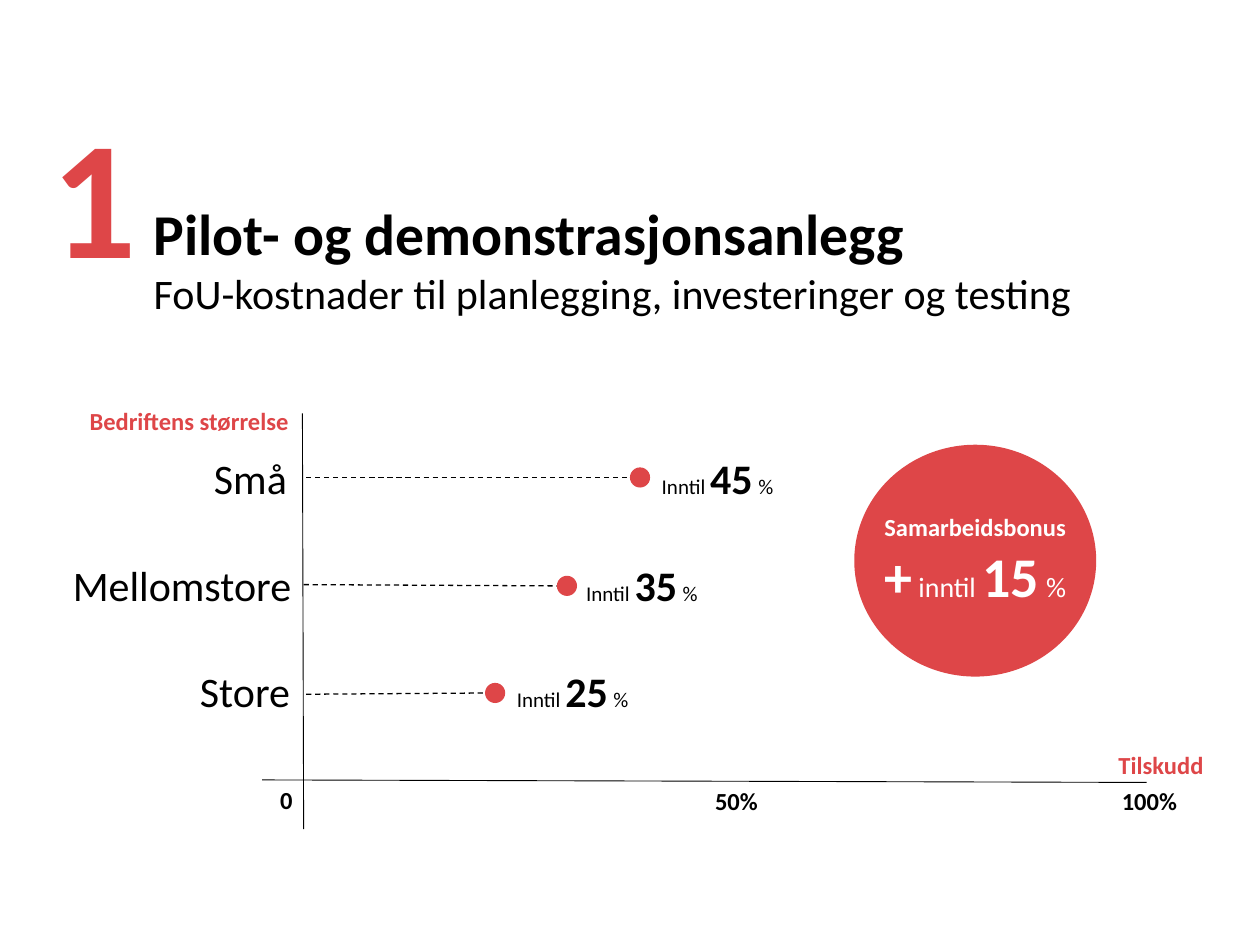
"""Build the slide on grant rates for pilot and demonstration plants."""
from lxml import etree
from pptx import Presentation
from pptx.dml.color import RGBColor
from pptx.enum import dml, shapes, text
from pptx.oxml.ns import qn
from pptx.util import Pt

PX = 9144
RED = RGBColor(0xDE, 0x46, 0x48)
BLACK = RGBColor(0, 0, 0)
WHITE = RGBColor(255, 255, 255)
LEFT, CENTER, RIGHT = text.PP_ALIGN.LEFT, text.PP_ALIGN.CENTER, text.PP_ALIGN.RIGHT


class Deck:
    """Hold the font and the current slide, and draw its elements."""

    def __init__(self, width, height, font):
        self.prs = Presentation()
        self.prs.slide_width, self.prs.slide_height = width * PX, height * PX
        self.slide = self.prs.slides.add_slide(self.prs.slide_layouts[5])
        self.font = font

    def run(self, p, words, size, color=BLACK, bold=False):
        r = p.add_run()
        r.text = words
        r.font.name, r.font.size, r.font.bold = self.font, Pt(size), bold
        r.font.color.rgb = color

    def title(self, box, heading, subheading):
        sp = self.slide.shapes.title
        sp.left, sp.top, sp.width, sp.height = (v * PX for v in box)
        tf = sp.text_frame
        tf.margin_left = tf.margin_top = tf.margin_right = tf.margin_bottom = 0
        tf.vertical_anchor = text.MSO_ANCHOR.BOTTOM
        tf.auto_size = text.MSO_AUTO_SIZE.NONE
        tf.word_wrap = True
        p = tf.paragraphs[0]
        p.alignment = LEFT
        self.run(p, heading, 33, bold=True)
        p.add_line_break()
        self.run(p, subheading, 24)

    def label(self, box, runs, align=RIGHT, spacing=None, wrap=True):
        sp = self.slide.shapes.add_textbox(*(v * PX for v in box))
        tf = sp.text_frame
        tf.word_wrap = wrap
        p = tf.paragraphs[0]
        p.alignment, p.line_spacing = align, spacing
        for r in runs:
            self.run(p, *r)

    def line(self, x1, y1, x2, y2, width, dashed=False):
        ends = (v * PX for v in (x1, y1, x2, y2))
        sp = self.slide.shapes.add_connector(shapes.MSO_CONNECTOR.STRAIGHT, *ends)
        sp.line.color.rgb, sp.line.width = BLACK, Pt(width)
        if dashed:
            sp.line.dash_style = dml.MSO_LINE.DASH
        etree.SubElement(sp._element.spPr, qn("a:effectLst"))

    def ellipse(self, box, paragraphs=()):
        sp = self.slide.shapes.add_shape(shapes.MSO_SHAPE.OVAL, *(v * PX for v in box))
        sp.shadow.inherit = False
        sp.fill.solid()
        sp.fill.fore_color.rgb = RED
        sp.line.fill.background()
        tf = sp.text_frame
        tf.word_wrap = False
        tf.vertical_anchor = text.MSO_ANCHOR.MIDDLE
        for i, runs in enumerate(paragraphs):
            p = tf.add_paragraph() if i else tf.paragraphs[0]
            p.alignment = CENTER
            for words, size, bold in runs:
                self.run(p, words, size, WHITE, bold)


def main():
    deck = Deck(1000, 750, "Calibri")
    deck.title((122, 135, 864, 117), "Pilot- og demonstrasjonsanlegg",
               "FoU-kostnader til planlegging, investeringer og testing")
    deck.label((31, 67, 88, 172), [("1", 96, RED, True)], LEFT, wrap=False)

    deck.line(241, 658, 240, 328, 0.5)
    deck.line(208, 619, 910, 621, 0.5)
    deck.label((54, 322, 185, 29), [("Bedriftens størrelse", 14, RED, True)], spacing=0.8)
    deck.label((830, 590, 135, 34), [("Tilskudd", 14, RED, True)])
    for tick, x, y, align in (("0", 161, 618, RIGHT), ("50%", 544, 619, CENTER),
                              ("100%", 863, 619, RIGHT)):
        deck.label((x, y, 81, 34), [(tick, 14, BLACK, True)], align)

    rows = (
        ("Små", (160, 354, 83, 50), LEFT, "45", (243, 379), (500, 379), (513, 113)),
        ("Mellomstore", (44, 439, 197, 50), RIGHT, "35", (241, 464), (442, 465), (451, 117)),
        ("Store", (145, 523, 95, 50), RIGHT, "25", (243, 551), (385, 550), (396, 117)),
    )
    for size, box, align, rate, start, end, (x, width) in rows:
        deck.label(box, [(size, 24)], align)
        deck.line(*start, *end, 0.75, dashed=True)
        deck.ellipse((end[0], end[1] - 8, 16, 16))
        deck.label((x, box[1], width, 50),
                   [("Inntil ", 12), (rate, 24, BLACK, True), (" ", 14, BLACK, True),
                    ("%", 12)], CENTER)

    deck.ellipse((678, 353, 192, 184), (
        [("Samarbeidsbonus", 14, True)],
        [("+", 32, True), (" inntil ", 16, False), ("15", 32, True),
         (" ", 18, True), ("%", 16, False)],
    ))
    deck.prs.save("out.pptx")


if __name__ == "__main__":
    main()
